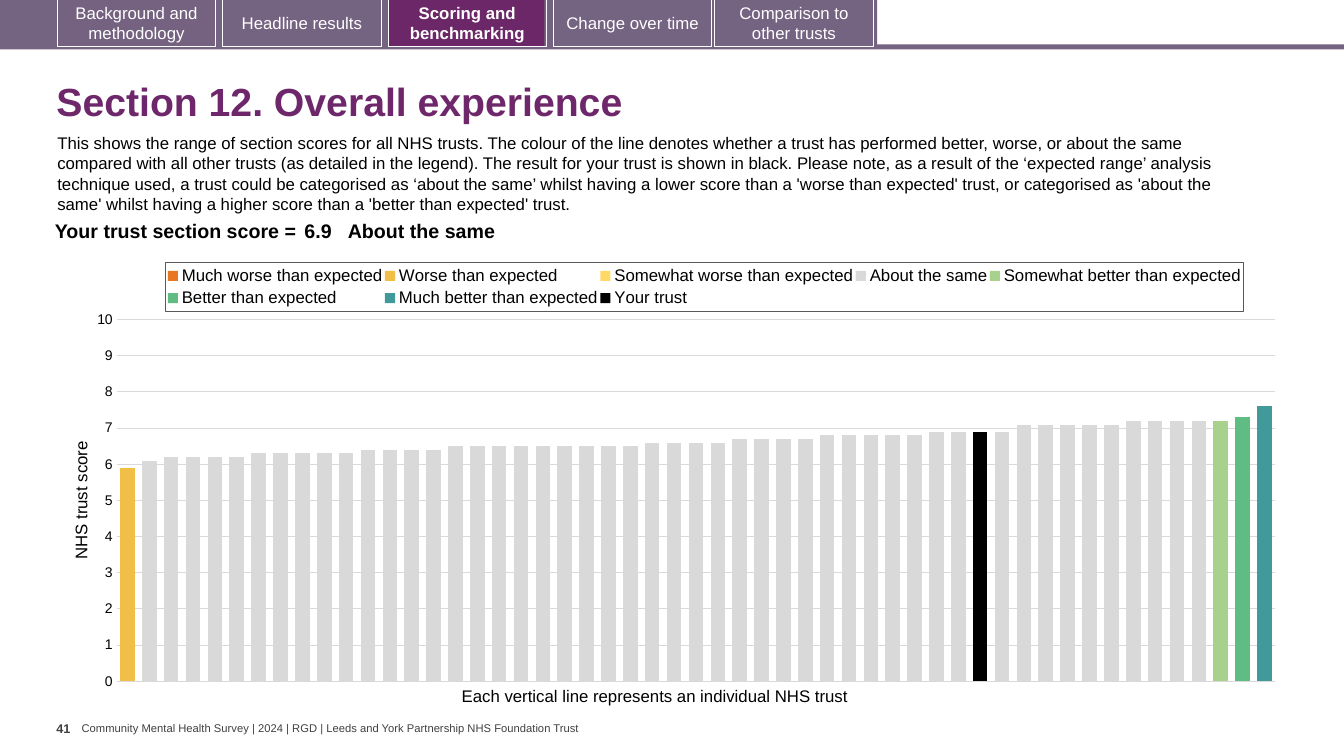
from copy import deepcopy

from lxml import etree
from pptx import Presentation
from pptx.chart.data import CategoryChartData
from pptx.dml.color import RGBColor
from pptx.enum.chart import XL_CHART_TYPE, XL_LEGEND_POSITION, XL_TICK_MARK
from pptx.enum.shapes import MSO_SHAPE
from pptx.enum.text import MSO_ANCHOR, PP_ALIGN
from pptx.oxml import parse_xml
from pptx.oxml.ns import nsdecls, qn
from pptx.util import Inches, Pt

COLOURS = {
    "band": "756382", "first tab": "746280", "active tab": "6B2768",
    "title": "6D276A", "footer": "404040", "text": "000000",
    "white": "FFFFFF", "grid": "D9D9D9", "legend box": "595959",
}

TRUST_COUNT = 53
YOUR_TRUST = 40

# Scores by band: name, colour, number of the first trust, scores from there on
ABOUT_THE_SAME = (
    [6.1] + [6.2] * 4 + [6.3] * 5 + [6.4] * 4 + [6.5] * 9 + [6.6] * 4 + [6.7] * 4
    + [6.8] * 5 + [6.9] * 4 + [7.1] * 5 + [7.2] * 4
)
BANDS = [
    ("Much worse than expected", "E87722", 1, []),
    ("Worse than expected", "F1BE48", 1, [5.9]),
    ("Somewhat worse than expected", "FFD966", 1, []),
    ("About the same", "D9D9D9", 2, ABOUT_THE_SAME),
    ("Somewhat better than expected", "A9D18E", 51, [7.2]),
    ("Better than expected", "5FBD83", 52, [7.3]),
    ("Much better than expected", "419999", 53, [7.6]),
    ("Your trust", "000000", YOUR_TRUST, [6.9]),
]

TABS = [
    ("Background and methodology", 0.57, "first tab"),
    ("Headline results", 2.21, None),
    ("Scoring and benchmarking", 3.85, None),
    ("Change over time", 5.49, "band"),
    ("Comparison to other trusts", 7.09, "band"),
]
ACTIVE_TAB = "Scoring and benchmarking"

INTRO = (
    "This shows the range of section scores for all NHS trusts. The colour of the line "
    "denotes whether a trust has performed better, worse, or about the same compared with "
    "all other trusts (as detailed in the legend). The result for your trust is shown in "
    "black. Please note, as a result of the ‘expected range’ analysis technique used, a "
    "trust could be categorised as ‘about the same’ whilst having a lower score than a "
    "'worse than expected' trust, or categorised as 'about the same' whilst having a higher "
    "score than a 'better than expected' trust."
)


def rgb(name):
    return RGBColor.from_string(COLOURS.get(name, name))


def apply(target, formats):
    for attribute, value in formats.items():
        setattr(target, attribute, value)


def place(x, y, width, height):
    return [Inches(length) for length in (x, y, width, height)]


def manual_layout(x, y, width, height, inner=False):
    target = '<c:layoutTarget val="inner"/>' if inner else ""
    parts = [("xMode", "edge"), ("yMode", "edge"), ("x", x), ("y", y), ("w", width), ("h", height)]
    body = "".join(f'<c:{tag} val="{value}"/>' for tag, value in parts)
    return parse_xml(
        f'<c:layout {nsdecls("c")}><c:manualLayout>{target}{body}</c:manualLayout></c:layout>'
    )


class SlideBuilder:
    def __init__(self, slide, face="Arial"):
        self.slide = slide
        self.shapes = slide.shapes
        self.face = face

    def font(self, font, size, colour="text", bold=False):
        apply(font, {"name": self.face, "size": Pt(size), "bold": bold})
        font.color.rgb = rgb(colour)

    def put_text(self, frame, text, size, colour="text", bold=False, align=PP_ALIGN.LEFT,
                 **formats):
        apply(frame, {"word_wrap": True, **formats})
        paragraph = frame.paragraphs[0]
        paragraph.alignment = align
        run = paragraph.add_run()
        run.text = text
        self.font(run.font, size, colour, bold)
        return paragraph

    def title(self, text, box):
        heading = self.shapes.title
        apply(heading, dict(zip(("left", "top", "width", "height"), place(*box))))
        paragraph = self.put_text(heading.text_frame, text, 28, "title", True,
                                  vertical_anchor=MSO_ANCHOR.MIDDLE)
        paragraph.line_spacing = 0.9

    def text(self, text, box, size, colour="text", bold=False, **formats):
        frame = self.shapes.add_textbox(*place(*box)).text_frame
        self.put_text(frame, text, size, colour, bold, **formats)

    def rectangle(self, box, fill=None, line=None):
        shape = self.shapes.add_shape(MSO_SHAPE.RECTANGLE, *place(*box))
        shape.shadow.inherit = False
        if fill:
            shape.fill.solid()
            shape.fill.fore_color.rgb = rgb(fill)
        else:
            shape.fill.background()
        if line:
            shape.line.color.rgb = rgb(line)
            shape.line.width = Pt(0.75)
        else:
            shape.line.fill.background()
        return shape

    def tab(self, text, left, fill):
        shape = self.rectangle((left, -0.01, 1.57, 0.47), fill, "white")
        self.put_text(shape.text_frame, text, 12, "white", text == ACTIVE_TAB, PP_ALIGN.CENTER,
                      vertical_anchor=MSO_ANCHOR.MIDDLE)

    def score_row(self, box, columns):
        table = self.shapes.add_table(1, len(columns), *place(*box)).table
        apply(table, {"first_row": False, "horz_banding": False})
        for index, (text, width, align, side) in enumerate(columns):
            table.columns[index].width = Inches(width)
            cell = table.cell(0, index)
            cell.fill.background()
            apply(cell, {"margin_left": Inches(side), "margin_right": Inches(side),
                         "margin_top": Inches(0.04), "margin_bottom": Inches(0.04)})
            self.put_text(cell.text_frame, text, 14, bold=True, align=align)

    def score_chart(self, box):
        scores = CategoryChartData()
        scores.categories = [str(number) for number in range(1, TRUST_COUNT + 1)]
        for name, _, first, values in BANDS:
            before = [None] * (first - 1)
            after = [None] * (TRUST_COUNT - len(before) - len(values))
            scores.add_series(name, before + values + after)
        chart = self.shapes.add_chart(XL_CHART_TYPE.COLUMN_CLUSTERED, *place(*box), scores).chart
        chart.has_title = False
        self.font(chart.font, 10)
        apply(chart.plots[0], {"gap_width": 50, "overlap": 100, "vary_by_categories": False})
        for series, (_, colour, _, _) in zip(chart.plots[0].series, BANDS):
            series.format.fill.solid()
            series.format.fill.fore_color.rgb = rgb(colour)

        # Axes
        chart.category_axis.visible = False
        axis = chart.value_axis
        apply(axis, {"minimum_scale": 0, "maximum_scale": 10, "major_unit": 1,
                     "major_tick_mark": XL_TICK_MARK.NONE, "has_major_gridlines": True})
        apply(axis.tick_labels, {"number_format": "0", "number_format_is_linked": False})
        self.font(axis.tick_labels.font, 10)
        axis.format.line.fill.background()
        axis.major_gridlines.format.line.color.rgb = rgb("grid")
        axis.major_gridlines.format.line.width = Pt(0.75)
        caption = axis.axis_title.text_frame
        self.put_text(caption, "NHS trust score", 12)
        caption._txBody.find(qn("a:bodyPr")).set("rot", "-5400000")

        # Legend and plot area
        chart.has_legend = True
        legend = chart.legend
        apply(legend, {"position": XL_LEGEND_POSITION.TOP, "include_in_layout": False})
        self.font(legend.font, 12)
        for old in legend._element.findall(qn("c:layout")):
            legend._element.remove(old)
        legend._element.find(qn("c:legendPos")).addnext(manual_layout(0.08, 0.03, 0.88, 0.11))
        legend._element.find(qn("c:txPr")).addprevious(parse_xml(
            f'<c:spPr {nsdecls("c", "a")}><a:ln w="9525"><a:solidFill>'
            f'<a:srgbClr val="{COLOURS["legend box"]}"/></a:solidFill></a:ln></c:spPr>'))
        area = chart._chartSpace.chart.plotArea
        for old in area.findall(qn("c:layout")):
            area.remove(old)
        area.insert(0, manual_layout(0.04, 0.158, 0.946, 0.808, inner=True))
        self.second_axis(area)

    def second_axis(self, area):
        """Move the last series to a right-hand axis without labels."""
        bars = area.find(qn("c:barChart"))
        right = deepcopy(bars)
        bars.remove(bars.findall(qn("c:ser"))[-1])
        for series in right.findall(qn("c:ser"))[:-1]:
            right.remove(series)
        bars.addnext(right)
        left_axes = [area.find(qn("c:catAx")), area.find(qn("c:valAx"))]
        right_axes = [deepcopy(axis) for axis in left_axes]
        ids = {axis.find(qn("c:axId")).get("val"): str(9001 + index)
               for index, axis in enumerate(left_axes)}
        for part in [right] + right_axes:
            for tag in ("c:axId", "c:crossAx"):
                for reference in part.findall(qn(tag)):
                    reference.set("val", ids[reference.get("val")])
        value_axis = right_axes[1]
        for tag in ("c:majorGridlines", "c:title"):
            value_axis.remove(value_axis.find(qn(tag)))
        for tag, value in {"axPos": "r", "tickLblPos": "none", "crosses": "max"}.items():
            element = value_axis.find(qn(f"c:{tag}"))
            if element is None:
                element = etree.Element(qn(f"c:{tag}"))
                value_axis.find(qn("c:crossAx")).addprevious(element)
            element.set("val", value)
        left_axes[1].addnext(value_axis)
        value_axis.addnext(right_axes[0])


def main():
    deck = Presentation()
    apply(deck, {"slide_width": Inches(13.33), "slide_height": Inches(7.5)})
    page = SlideBuilder(deck.slides.add_slide(deck.slide_layouts[5]))
    no_margins = dict.fromkeys(("margin_left", "margin_right", "margin_top", "margin_bottom"), 0)

    # Footer
    page.text("Community Mental Health Survey | 2024 | RGD | Leeds and York Partnership NHS "
              "Foundation Trust", (0.81, 7.16, 5.01, 0.13), 8, "footer",
              word_wrap=False, vertical_anchor=MSO_ANCHOR.MIDDLE, **no_margins)
    page.text("41", (0.56, 7.1, 0.25, 0.4), 9, "footer", True, margin_left=0, margin_right=0)

    # Navigation tabs
    page.rectangle((0, 0.44, 13.33, 0.05), "band")
    page.rectangle((0, 0, 8.7, 0.47), "band")
    page.rectangle((3.86, 0, 1.54, 0.46), "active tab")
    for tab in TABS:
        page.tab(*tab)

    # Heading and introduction
    page.title("Section 12. Overall experience", (0.46, 0.67, 12.49, 0.72))
    page.text(INTRO, (0.47, 1.27, 12.13, 0.91), 12)

    # Chart with its caption, then the trust's own score
    page.text("Each vertical line represents an individual NHS trust",
              (4.48, 6.75, 4.11, 0.3), 12, word_wrap=False)
    page.score_chart((0.67, 2.47, 12.15, 4.44))
    page.score_row((0.35, 2.15, 11.69, 0.22), [
        ("Your trust section score =", 2.63, PP_ALIGN.RIGHT, 0.04),
        ("6.9", 0.47, PP_ALIGN.LEFT, 0.04),
        ("About the same", 8.59, PP_ALIGN.LEFT, 0),
    ])
    deck.save("out.pptx")


if __name__ == "__main__":
    main()
